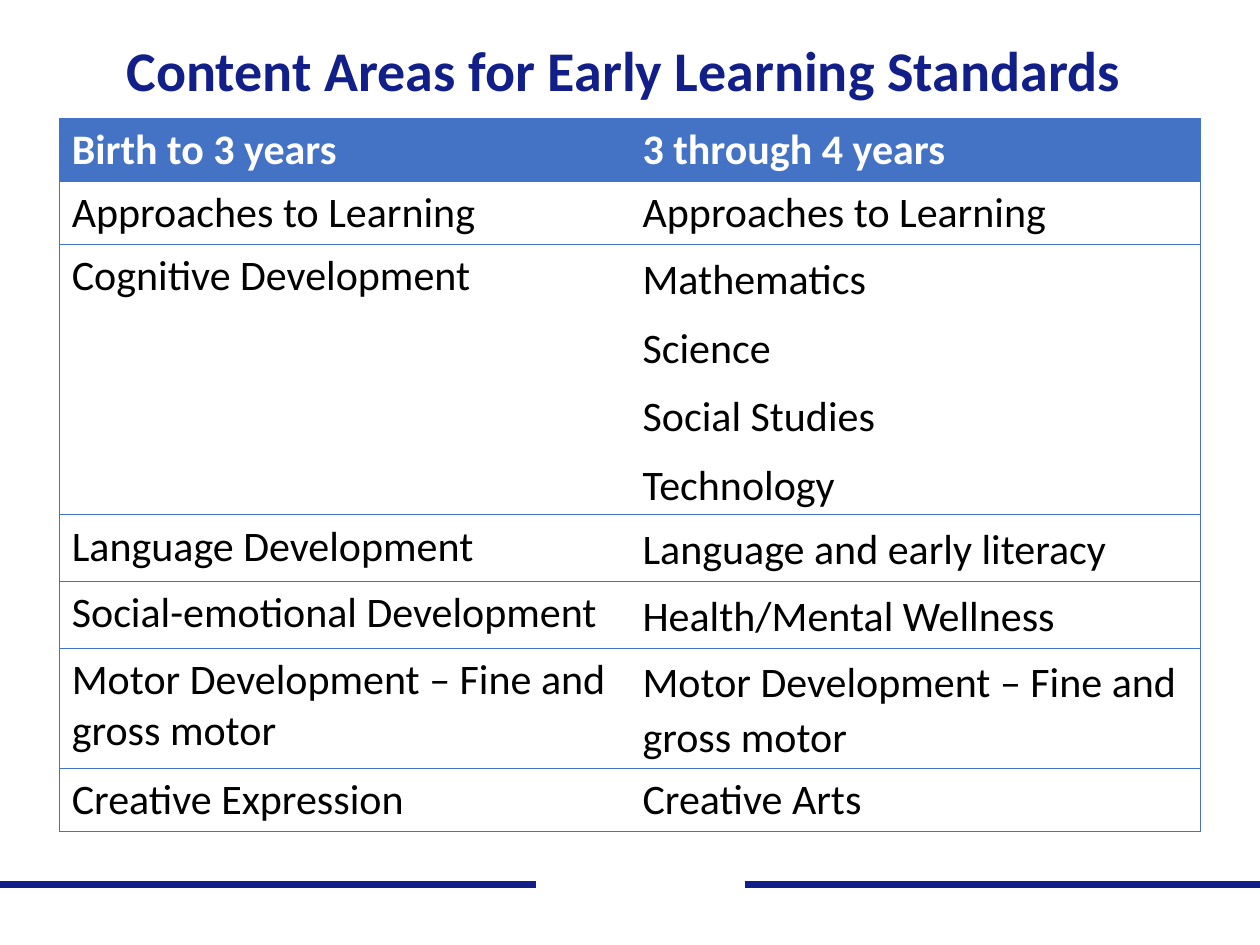
from lxml import etree
from pptx import Presentation
from pptx.dml.color import RGBColor
from pptx.enum.shapes import MSO_CONNECTOR
from pptx.enum.text import MSO_ANCHOR, PP_ALIGN
from pptx.oxml.ns import qn
from pptx.util import Inches, Pt

STRAIGHT = MSO_CONNECTOR.STRAIGHT
MIDDLE = MSO_ANCHOR.MIDDLE
CENTER = PP_ALIGN.CENTER

NAVY = RGBColor(0x12, 0x1F, 0x88)
BLUE = RGBColor(0x44, 0x72, 0xC4)
WHITE = RGBColor(0xFF, 0xFF, 0xFF)
BLACK = RGBColor(0, 0, 0)
FONT = "Calibri"

TITLE = "Content Areas for Early Learning Standards "
MOTOR = "Motor Development – Fine and gross motor"
SUBJECTS = "Mathematics\nScience\nSocial Studies\nTechnology"
AREAS = [
    ("Birth to 3 years", "3 through 4 years", 0.47),
    ("Approaches to Learning", "Approaches to Learning", 0.47),
    ("Cognitive Development", SUBJECTS, 1.82),
    ("Language Development", "Language and early literacy", 0.47),
    ("Social-emotional Development", "Health/Mental Wellness", 0.47),
    (MOTOR, MOTOR, 0.85),
    ("Creative Expression", "Creative Arts", 0.47),
]
SPACED_ROWS = range(2, 6)


def style_font(paragraph, size, color, bold):
    font = paragraph.font
    font.name = FONT
    font.size = Pt(size)
    font.color.rgb = color
    font.bold = bold


def add_rule(slide, left, right, color):
    y = Inches(7.02)
    rule = slide.shapes.add_connector(STRAIGHT, Inches(left), y, Inches(right), y)
    rule.line.color.rgb = color
    rule.line.width = Pt(4.5)
    etree.SubElement(rule._element.spPr, qn("a:effectLst"))


def add_title(slide):
    title = slide.shapes.add_textbox(Inches(0.69), Inches(0.22), Inches(8.62), Inches(0.72))
    frame = title.text_frame
    frame.word_wrap = True
    frame.vertical_anchor = MIDDLE
    frame.text = TITLE
    heading = frame.paragraphs[0]
    heading.alignment = CENTER
    heading.line_spacing = 0.9
    style_font(heading, 32, NAVY, True)


def set_borders(cell, column):
    visible = {"L": column == 0, "R": column == 1, "T": True, "B": True}
    properties = cell._tc.get_or_add_tcPr()
    for position, (side, shown) in enumerate(visible.items()):
        border = etree.Element(qn(f"a:ln{side}"), w=str(Pt(0.5)))
        if shown:
            fill = etree.SubElement(border, qn("a:solidFill"))
            etree.SubElement(fill, qn("a:srgbClr"), val=str(BLUE))
        else:
            etree.SubElement(border, qn("a:noFill"))
        properties.insert(position, border)


def fill_cell(cell, text, row, column):
    header = row == 0
    cell.text = text
    if header:
        cell.fill.solid()
        cell.fill.fore_color.rgb = BLUE
    else:
        cell.fill.background()
    for paragraph in cell.text_frame.paragraphs:
        if column == 1 and row in SPACED_ROWS:
            paragraph.line_spacing = 1.07
            paragraph.space_after = Pt(8)
        style_font(paragraph, 24, WHITE if header else BLACK, header)
    set_borders(cell, column)


def add_areas_table(slide):
    height = sum(area[2] for area in AREAS)
    areas = slide.shapes.add_table(
        len(AREAS), 2, Inches(0.47), Inches(0.94), Inches(9.06), Inches(height)
    ).table
    areas.horz_banding = False
    for row, (infant, preschool, row_height) in enumerate(AREAS):
        areas.rows[row].height = Inches(row_height)
        for column, text in enumerate((infant, preschool)):
            fill_cell(areas.cell(row, column), text, row, column)


def main():
    deck = Presentation()
    deck.slide_width = Inches(10)
    deck.slide_height = Inches(7.5)
    slide = deck.slides.add_slide(deck.slide_layouts[6])
    add_rule(slide, 0, 10, NAVY)
    add_rule(slide, 4.25, 5.91, WHITE)
    add_title(slide)
    add_areas_table(slide)
    deck.save("out.pptx")


if __name__ == "__main__":
    main()
